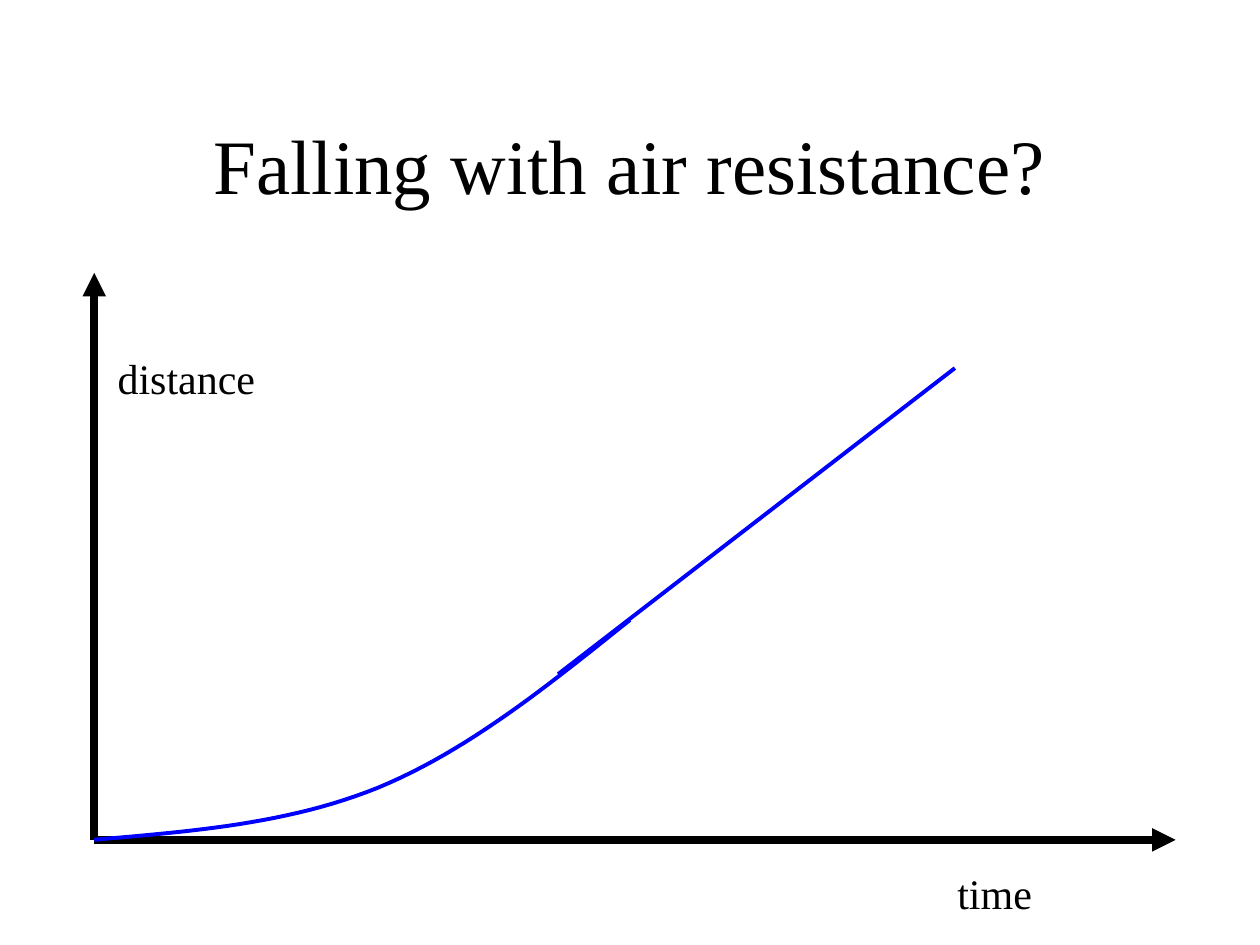
from dataclasses import dataclass

from lxml import etree
from pptx import Presentation
from pptx.dml.color import RGBColor
from pptx.enum import shapes, text
from pptx.oxml import ns
from pptx.util import Cm, Pt


@dataclass(frozen=True)
class Theme:
    font: str = "Times New Roman"
    ink: RGBColor = RGBColor(0, 0, 0)
    curve: RGBColor = RGBColor(0, 0, 255)
    title_size: int = 44
    label_size: int = 24
    axis_width: float = 4.5
    curve_width: float = 2.25


THEME = Theme()
ORIGIN = (1.9, 16.93)
CURVE_STEPS = 24


def set_attributes(obj, values):
    for name, value in values.items():
        setattr(obj, name, value)


def write_text(tf, content, size, align, anchor):
    set_attributes(tf, {"word_wrap": True, "vertical_anchor": anchor})
    p = tf.paragraphs[0]
    p.alignment = align
    r = p.add_run()
    r.text = content
    set_attributes(r.font, {"name": THEME.font, "size": Pt(size)})
    r.font.color.rgb = THEME.ink


def add_title(s, content, left, top, width, height):
    sp = s.shapes.title
    set_attributes(sp, {"left": Cm(left), "top": Cm(top),
                        "width": Cm(width), "height": Cm(height)})
    write_text(sp.text_frame, content, THEME.title_size,
               text.PP_ALIGN.CENTER, text.MSO_ANCHOR.MIDDLE)


def add_label(s, content, left, top, width, height=1.27):
    sp = s.shapes.add_textbox(Cm(left), Cm(top), Cm(width), Cm(height))
    write_text(sp.text_frame, content, THEME.label_size,
               text.PP_ALIGN.LEFT, text.MSO_ANCHOR.TOP)
    sp.text_frame.auto_size = text.MSO_AUTO_SIZE.SHAPE_TO_FIT_TEXT


def format_line(line, color, width):
    line.color.rgb = color
    line.width = Pt(width)


def add_line(s, start, end, color, width, arrow=False):
    cn = s.shapes.add_connector(shapes.MSO_CONNECTOR.STRAIGHT,
                                *map(Cm, start + end))
    format_line(cn.line, color, width)
    if arrow:
        ln = cn.line._get_or_add_ln()
        etree.SubElement(ln, ns.qn("a:tailEnd"), type="triangle")
    etree.SubElement(cn._element.spPr, ns.qn("a:effectLst"))


def bezier_point(controls, t):
    weights = ((1 - t) ** 3, 3 * t * (1 - t) ** 2, 3 * t ** 2 * (1 - t), t ** 3)
    return tuple(Cm(sum(w * c[axis] for w, c in zip(weights, controls)))
                 for axis in (0, 1))


def add_curve(s, segments):
    points = [bezier_point(controls, step / CURVE_STEPS)
              for controls in segments for step in range(1, CURVE_STEPS + 1)]
    builder = s.shapes.build_freeform(*bezier_point(segments[0], 0))
    builder.add_line_segments(points, close=False)
    sp = builder.convert_to_shape()
    sp.shadow.inherit = False
    sp.fill.background()
    format_line(sp.line, THEME.curve, THEME.curve_width)


def main():
    prs = Presentation()
    set_attributes(prs, {"slide_width": Cm(25.4), "slide_height": Cm(19.05)})
    s = prs.slides.add_slide(prs.slide_layouts[5])
    add_title(s, "Falling with air resistance?", 1.9, 1.7, 21.59, 3.18)

    # Axes and their labels
    for end in ((ORIGIN[0], 5.5), (23.7, ORIGIN[1])):
        add_line(s, ORIGIN, end, THEME.ink, THEME.axis_width, arrow=True)
    add_label(s, "distance", 2.12, 6.99, 4.23)
    add_label(s, "time", 19.05, 17.36, 3.81)

    # Accelerating fall, then constant terminal speed
    bend = (7.62, 15.88)
    add_curve(s, [
        (ORIGIN, (3.86, 16.76), (5.82, 16.61), bend),
        (bend, (9.42, 15.14), (11.05, 13.82), (12.7, 12.5)),
    ])
    add_line(s, (11.25, 13.59), (19.25, 7.42), THEME.curve, THEME.curve_width)

    prs.save("out.pptx")


if __name__ == "__main__":
    main()
